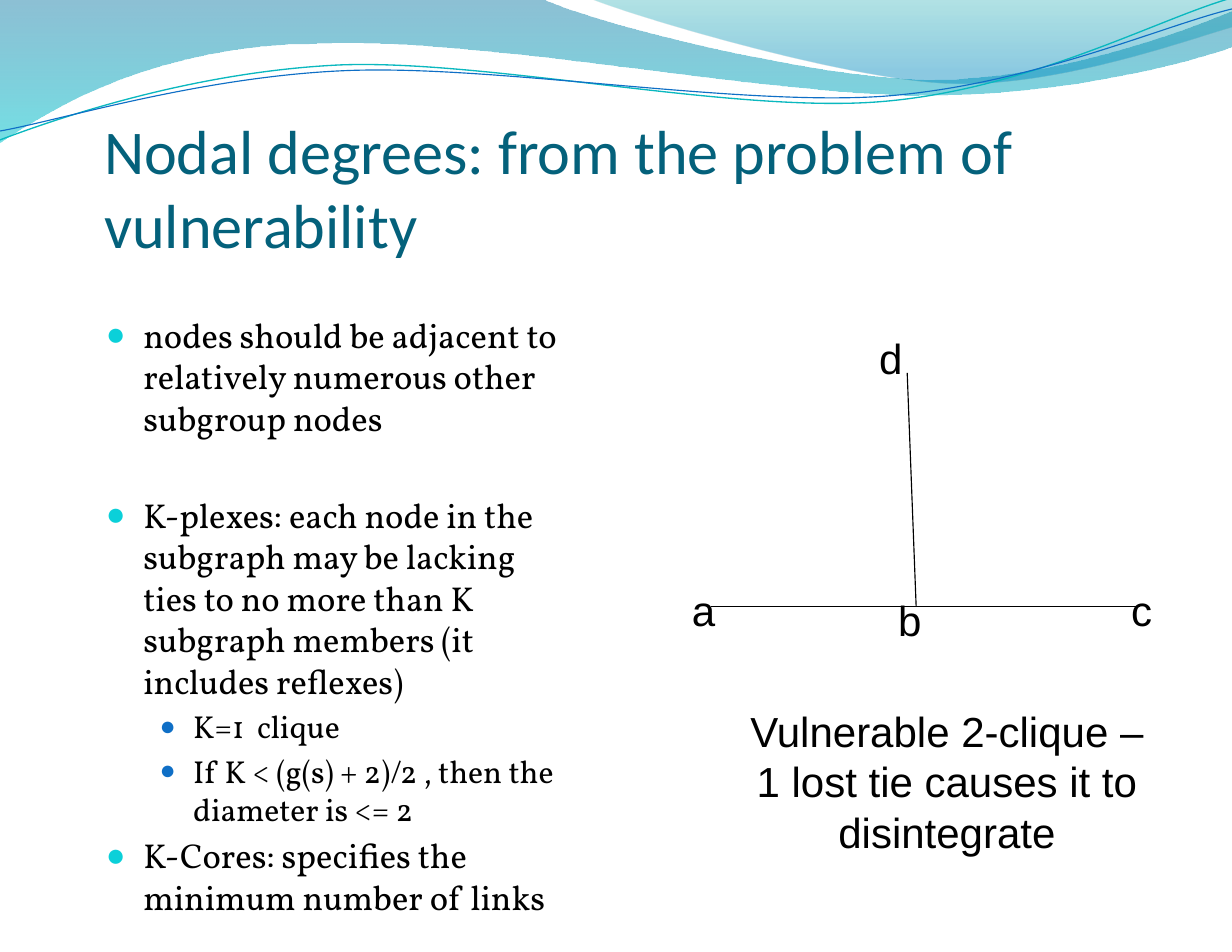
from dataclasses import dataclass
from math import cos, radians, sin

from lxml.etree import SubElement
from pptx import Presentation
from pptx.dml.color import RGBColor
from pptx.enum.shapes import MSO_CONNECTOR
from pptx.enum.text import MSO_ANCHOR, MSO_AUTO_SIZE, PP_ALIGN
from pptx.oxml.ns import qn
from pptx.util import Emu, Inches, Pt

W, H = Inches(11), Inches(8.5)
COLS, ROWS = 110, 85


@dataclass
class Wave:
    """Segments of one point (line) or three (curve), filled or outlined."""
    start: tuple
    segments: list
    stops: tuple = ()
    color: str = ""
    width: float = 0
    center: tuple = (0, 0)
    tilt: float = 0


@dataclass
class Label:
    """A text box on the grid."""
    text: str
    box: tuple
    size: float = 27
    font: str = "Arial"
    color: str = "000000"
    align: PP_ALIGN = PP_ALIGN.LEFT
    anchor: MSO_ANCHOR = MSO_ANCHOR.TOP
    wrap: bool = False
    insets: tuple = (1, 0.5, 1, 0.5)
    fit: MSO_AUTO_SIZE = MSO_AUTO_SIZE.SHAPE_TO_FIT_TEXT


@dataclass
class Level:
    """The look of one bullet level."""
    size: float
    pitch: float
    before: float
    margin: float
    hang: float
    bullet: str
    percent: int


@dataclass
class Item:
    """A bulleted paragraph."""
    text: str
    level: int = 0
    gap: float = 0


WAVES = [
    Wave((0, 0),
         [(48.4, -0.1), (52.3, 1.9, 73, 7.1, 83.4, 7.1), (93.8, 7.1, 105.4, 2.9, 110, 1),
          (110.1, 4.1), (108.2, 5, 95.7, 8.6, 82, 8.5), (68.4, 8.5, 42, 3.2, 28.3, 3.9),
          (14.2, 4, 5, 9.4, -0.1, 12.8), (0, 0)],
         stops=((0, "0074A1", 45), (100, "00C6CF", 55))),
    Wave((52.7, -0.1),
         [(56, 1.3, 75, 7, 84.6, 7.4), (94.1, 7.8, 105.8, 3.6, 110, 2.4),
          (110, 0), (52.7, -0.1)],
         stops=((0, "00A1A9", 30), (80, "008BBF", 45))),
    Wave((0, 12.5),
         [(5.3, 10.5, 17.3, 6.4, 30.4, 5.8), (43.5, 5.3, 65.2, 10.1, 78.4, 9.1),
          (91.6, 8.1, 103.2, 1.8, 109.7, -0.1)],
         color="0AB8BF", width=0.85, center=(54.9, 6.5), tilt=-2.7),
    Wave((0, 11.7),
         [(5.2, 10.8, 18, 6.8, 31.1, 6.3), (44.3, 5.8, 65.7, 9.5, 78.9, 8.6),
          (92, 7.6, 103.5, 2.4, 110, 0.8)],
         color="0F6FC6", width=0.75, center=(55, 6.7), tilt=-2.7),
]

TITLE = Label("Nodal degrees: from the problem of vulnerability", (9.3, 9.12, 99, 14.2),
              40, "Calibri", "04617B", anchor=MSO_ANCHOR.BOTTOM, wrap=True,
              insets=(0, 0.5, 0, 0), fit=MSO_AUTO_SIZE.NONE)
CAPTION = Label("Vulnerable 2-clique – 1 lost tie causes it to disintegrate",
                (65.8, 62.5, 37.5, 14.5), align=PP_ALIGN.CENTER, wrap=True)
TIES = [((63.5, 54.15), (101.8, 54.15)), ((81, 33.3), (81.8, 54.15))]
NODES = {"a": (60.8, 51.7), "b": (79.2, 52.55), "c": (100, 51.7), "d": (77.5, 29.2)}

BODY = (8.35, 27.42, 42.6, 55.7)
LEVELS = [Level(22.2, 26.7, 4.2, 3.35, 3.35, "0BD0D9", 95),
          Level(20.4, 24.4, 4, 7.8, 3, "0F6FC6", 85)]
ITEMS = [
    Item("nodes should be adjacent to relatively numerous other subgroup nodes"),
    Item("K-plexes: each node in the subgraph may be lacking ties to no more than K "
         "subgraph members (it includes reflexes)", gap=31.2),
    Item("K=1  clique", 1),
    Item("If K < (g(s) + 2)/2 , then the diameter is <= 2", 1),
    Item("K-Cores: specifies the minimum number of links"),
]


def rgb(color: str) -> RGBColor:
    """Turn a hex string into a colour."""
    return RGBColor.from_string(color)


def x(cols: float) -> Emu:
    """Length of some grid columns."""
    return Emu(round(W * cols / COLS))


def y(rows: float) -> Emu:
    """Length of some grid rows."""
    return Emu(round(H * rows / ROWS))


def untilt(point: tuple, wave: Wave) -> tuple:
    """Place a point so that the tilt of its wave brings it back."""
    (cx, cy), a = wave.center, radians(-wave.tilt)
    dx, dy = point[0] - cx, point[1] - cy
    return x(cx + dx * cos(a) - dy * sin(a)), y(cy + dx * sin(a) + dy * cos(a))


def add_gradient(sp, stops: tuple) -> None:
    """Fill a shape from top to bottom with translucent stops."""
    sp.fill.gradient()
    grad = sp._element.spPr.find(qn("a:gradFill"))
    for child in list(grad):
        grad.remove(child)
    gs_lst = SubElement(grad, qn("a:gsLst"))
    for pos, color, alpha in stops:
        gs = SubElement(gs_lst, qn("a:gs"), pos=str(pos * 1000))
        clr = SubElement(gs, qn("a:srgbClr"), val=color)
        SubElement(clr, qn("a:alpha"), val=str(alpha * 1000))
    SubElement(grad, qn("a:lin"), ang="5400000", scaled="0")


def bend(sp, segments: list) -> None:
    """Turn each three-point segment of an outline into a curve."""
    path = next(sp._element.iter(qn("a:path")))
    lines = iter(path.findall(qn("a:lnTo")))
    for seg in segments:
        parts = [next(lines) for _ in range(len(seg) // 2)]
        if len(parts) == 3:
            curve = SubElement(path, qn("a:cubicBezTo"))
            parts[0].addprevious(curve)
            for part in parts:
                curve.append(part[0])
                path.remove(part)


def add_wave(s, wave: Wave) -> None:
    """Draw one wave of the header."""
    pts = [wave.start] + [seg[i:i + 2] for seg in wave.segments
                          for i in range(0, len(seg), 2)]
    pts = [untilt(p, wave) for p in pts]
    fb = s.shapes.build_freeform(*pts[0])
    fb.add_line_segments(pts[1:], close=bool(wave.stops))
    sp = fb.convert_to_shape()
    bend(sp, wave.segments)
    sp.rotation = wave.tilt
    sp.shadow.inherit = False
    if wave.stops:
        add_gradient(sp, wave.stops)
        sp.line.fill.background()
    else:
        sp.fill.background()
        sp.line.color.rgb = rgb(wave.color)
        sp.line.width = Pt(wave.width)


def add_frame(s, box: tuple, insets: tuple, wrap: bool):
    """Add an empty text box and return its text frame."""
    left, top, width, height = box
    tf = s.shapes.add_textbox(x(left), y(top), x(width), y(height)).text_frame
    tf.word_wrap = wrap
    tf.margin_left, tf.margin_right = x(insets[0]), x(insets[2])
    tf.margin_top, tf.margin_bottom = y(insets[1]), y(insets[3])
    return tf


def add_run(p, text: str, size: float, font: str, color: str) -> None:
    """Add one run of text."""
    r = p.add_run()
    r.text = text
    r.font.size, r.font.name = Pt(size), font
    r.font.color.rgb = rgb(color)


def add_label(s, label: Label) -> None:
    """Draw a one-paragraph text box."""
    tf = add_frame(s, label.box, label.insets, label.wrap)
    tf.vertical_anchor, tf.auto_size = label.anchor, label.fit
    p = tf.paragraphs[0]
    p.alignment = label.align
    add_run(p, label.text, label.size, label.font, label.color)


def add_list(s, items: list) -> None:
    """Draw the bulleted list."""
    tf = add_frame(s, BODY, (1.1, 0.6, 1.1, 0.6), True)
    for i, item in enumerate(items):
        p = tf.add_paragraph() if i else tf.paragraphs[0]
        lv = LEVELS[item.level]
        p.level = item.level
        p.space_before, p.line_spacing = Pt(lv.before + item.gap), Pt(lv.pitch)
        pPr = p._p.get_or_add_pPr()
        pPr.set("marL", str(x(lv.margin)))
        pPr.set("indent", str(-x(lv.hang)))
        SubElement(SubElement(pPr, qn("a:buClr")), qn("a:srgbClr"), val=lv.bullet)
        SubElement(pPr, qn("a:buSzPct"), val=str(lv.percent * 1000))
        SubElement(pPr, qn("a:buFont"), typeface="Arial")
        SubElement(pPr, qn("a:buChar"), char="●")
        add_run(p, item.text, lv.size, "Vollkorn", "000000")


def add_tie(s, start: tuple, end: tuple) -> None:
    """Draw a tie between two nodes."""
    cn = s.shapes.add_connector(MSO_CONNECTOR.STRAIGHT, x(start[0]), y(start[1]),
                                x(end[0]), y(end[1]))
    cn.line.color.rgb = rgb("000000")
    cn.line.width = Pt(0.75)
    SubElement(cn._element.spPr, qn("a:effectLst"))


def main() -> None:
    """Build the slide and save it."""
    prs = Presentation()
    prs.slide_width, prs.slide_height = W, H
    s = prs.slides.add_slide(prs.slide_layouts[6])
    for wave in WAVES:
        add_wave(s, wave)
    add_label(s, TITLE)
    add_list(s, ITEMS)
    for tie in TIES:
        add_tie(s, *tie)
    for name, (left, top) in NODES.items():
        add_label(s, Label(name, (left, top, 4.1, 5.5)))
    add_label(s, CAPTION)
    prs.save("out.pptx")


if __name__ == "__main__":
    main()
